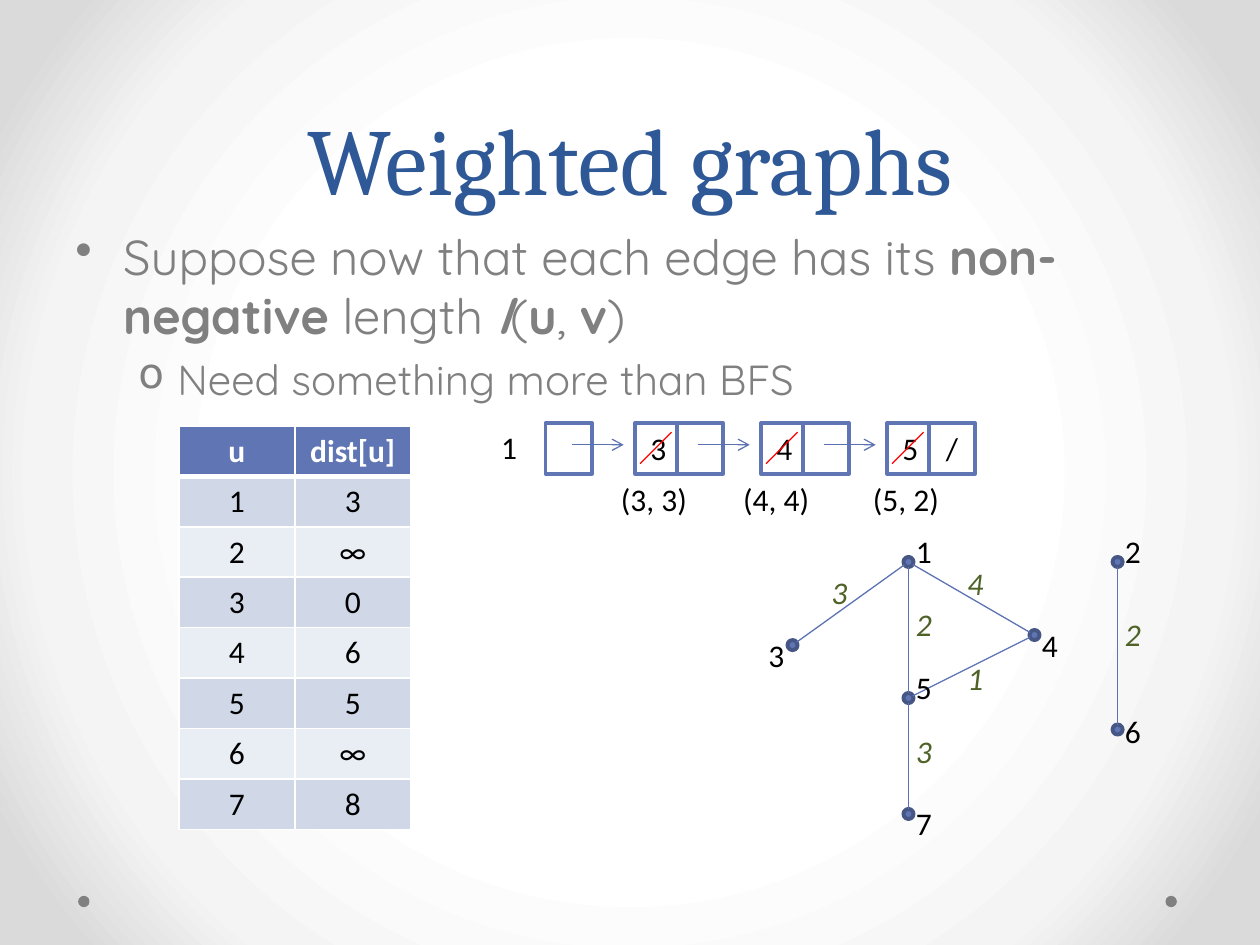
from dataclasses import dataclass
from math import hypot

from pptx import Presentation
from pptx.dml.color import RGBColor
from pptx.enum.shapes import MSO_CONNECTOR, MSO_SHAPE
from pptx.enum.text import MSO_ANCHOR, MSO_AUTO_SIZE, PP_ALIGN
from pptx.oxml import parse_xml
from pptx.oxml.ns import nsdecls, qn
from pptx.util import Inches, Pt


@dataclass(frozen=True)
class Theme:
    # Colours
    title: str = "2F5897"
    body: str = "808080"
    ink: str = "000000"
    paper: str = "FFFFFF"
    accent: str = "6076B4"
    node_line: str = "475785"
    edge: str = "5C72B2"
    weight: str = "4F6228"
    strike: str = "FF0000"
    bands: tuple = ("D0D8E8", "E9EDF4")
    backdrop: tuple = ((50, "FFFFFF"), (76, "F4F4F4"), (92, "DADADA"))
    # Fonts and type sizes
    title_font: str = "Cambria"
    body_font: str = "Quicksand"
    label_font: str = "Calibri"
    title_size: int = 54
    body_size: int = 28
    sub_size: int = 24
    label_size: int = 18


THEME = Theme()


def write(paragraph, text, size=THEME.label_size, font=THEME.label_font,
          color=THEME.ink, bold=False, italic=False, align=None):
    """Add one formatted run to a paragraph."""
    run = paragraph.add_run()
    run.text = text
    run.font.size, run.font.name = Pt(size), font
    run.font.bold, run.font.italic = bold, italic
    run.font.color.rgb = RGBColor.from_string(color)
    if align is not None:
        paragraph.alignment = align


class SlideBuilder:
    def __init__(self, slide, theme):
        self.slide, self.theme = slide, theme

    def background(self):
        self.slide.background.fill.gradient()
        linear = self.slide._element.find(".//" + qn("a:gradFill"))
        stops = "".join(
            f'<a:gs pos="{pos * 1000}"><a:srgbClr val="{color}"/></a:gs>'
            for pos, color in self.theme.backdrop)
        linear.getparent().replace(linear, parse_xml(
            f'<a:gradFill {nsdecls("a")} rotWithShape="1"><a:gsLst>{stops}</a:gsLst>'
            '<a:path path="circle"><a:fillToRect l="50000" t="50000" r="50000" b="50000"/>'
            '</a:path></a:gradFill>'))

    def title(self, text):
        heading = self.slide.shapes.title
        heading.left, heading.top = Inches(0.5), Inches(0)
        heading.width, heading.height = Inches(9), Inches(1.75)
        frame = heading.text_frame
        frame.auto_size = MSO_AUTO_SIZE.NONE
        frame.vertical_anchor = MSO_ANCHOR.BOTTOM
        frame.paragraphs[0].line_spacing = Pt(58)
        write(frame.paragraphs[0], text, size=self.theme.title_size,
              font=self.theme.title_font, color=self.theme.title, align=PP_ALIGN.CENTER)

    def text_frame(self, x, y, width, height):
        box = self.slide.shapes.add_textbox(*map(Inches, (x, y, width, height)))
        box.text_frame.word_wrap = True
        return box.text_frame

    def label(self, text, x, y, width=0.33, **style):
        write(self.text_frame(x, y, width, 0.4).paragraphs[0], text, **style)

    def bullet(self, paragraph, runs, char, margin, indent, size):
        properties = paragraph._p.get_or_add_pPr()
        properties.set("marL", str(Inches(margin)))
        properties.set("indent", str(Inches(indent)))
        properties.append(parse_xml(f'<a:buChar {nsdecls("a")} char="{char}"/>'))
        for text, style in runs:
            write(paragraph, text, size=size, font=self.theme.body_font,
                  color=self.theme.body, **style)

    def shape(self, kind, x, y, width, height, fill, line=None):
        item = self.slide.shapes.add_shape(kind, *map(Inches, (x, y, width, height)))
        item.shadow.inherit = False
        item.fill.solid()
        item.fill.fore_color.rgb = RGBColor.from_string(fill)
        if line:
            item.line.color.rgb = RGBColor.from_string(line)
            item.line.width = Pt(2.25)
        else:
            item.line.fill.background()
        return item

    def list_cell(self, x, text=""):
        cell = self.shape(MSO_SHAPE.RECTANGLE, x, 3.36, 0.37, 0.4,
                          self.theme.paper, self.theme.accent)
        cell.text_frame.vertical_anchor = MSO_ANCHOR.TOP
        if text:
            write(cell.text_frame.paragraphs[0], text, align=PP_ALIGN.CENTER)

    def line(self, start, end, color, arrow=False):
        link = self.slide.shapes.add_connector(
            MSO_CONNECTOR.STRAIGHT, *map(Inches, (*start, *end)))
        link.line.color.rgb = RGBColor.from_string(color)
        link.line.width = Pt(0.75)
        if arrow:
            link.line._get_or_add_ln().append(
                parse_xml(f'<a:tailEnd {nsdecls("a")} type="arrow"/>'))
        link._element.spPr.append(parse_xml(f'<a:effectLst {nsdecls("a")}/>'))

    def edge(self, start, end, radius=0.04):
        dx, dy = end[0] - start[0], end[1] - start[1]
        trim = radius / hypot(dx, dy)
        self.line((start[0] + dx * trim, start[1] + dy * trim),
                  (end[0] - dx * trim, end[1] - dy * trim), self.theme.edge)

    def table(self, rows, x, y, column_width, row_height):
        grid = self.slide.shapes.add_table(
            len(rows), len(rows[0]), Inches(x), Inches(y),
            Inches(column_width * len(rows[0])), Inches(row_height * len(rows))).table
        for r, row in enumerate(rows):
            header = r == 0
            fill = self.theme.accent if header else self.theme.bands[(r - 1) % 2]
            for c, text in enumerate(row):
                cell = grid.cell(r, c)
                write(cell.text_frame.paragraphs[0], text, bold=header,
                      color=self.theme.paper if header else self.theme.ink,
                      align=PP_ALIGN.CENTER)
                self.borders(cell, top=3 if r == 1 else 1, bottom=3 if header else 1)
                cell.fill.solid()
                cell.fill.fore_color.rgb = RGBColor.from_string(fill)

    def borders(self, cell, top, bottom):
        properties = cell._tc.get_or_add_tcPr()
        for side, width in (("L", 1), ("R", 1), ("T", top), ("B", bottom)):
            properties.append(parse_xml(
                f'<a:ln{side} {nsdecls("a")} w="{Pt(width)}"><a:solidFill>'
                f'<a:srgbClr val="{self.theme.paper}"/></a:solidFill></a:ln{side}>'))


def main():
    deck = Presentation()
    deck.slide_width, deck.slide_height = Inches(10), Inches(7.5)
    page = SlideBuilder(deck.slides.add_slide(deck.slide_layouts[5]), THEME)

    # Backdrop with its two corner dots, and the title
    page.background()
    for x in (9.25, 0.62):
        page.shape(MSO_SHAPE.OVAL, x, 7.11, 0.09, 0.09, THEME.body)
    page.title("Weighted graphs")

    # Bulleted statement
    plain, strong = {}, {"bold": True}
    statement = page.text_frame(0.5, 1.75, 9.33, 1.55)
    page.bullet(statement.paragraphs[0], [
        ("Suppose now that each edge has its ", plain), ("non-negative", strong),
        (" length ", plain), ("l", {"bold": True, "italic": True}), ("(", plain),
        ("u", strong), (", ", plain), ("v", strong), (")", plain),
    ], "•", 0.38, -0.38, THEME.body_size)
    remark = statement.add_paragraph()
    remark.level = 1
    page.bullet(remark, [("Need something more than BFS", plain)],
                "o", 0.81, -0.31, THEME.sub_size)
    remark.space_before = Pt(5)

    # Graph: node centres, edges, node names and edge lengths
    nodes = {1: (7.21, 4.46), 2: (8.87, 4.46), 3: (6.29, 5.12), 4: (8.21, 5.04),
             5: (7.21, 5.54), 6: (8.87, 5.79), 7: (7.21, 6.46)}
    for x, y in nodes.values():
        page.shape(MSO_SHAPE.OVAL, x - 0.04, y - 0.04, 0.08, 0.08,
                   THEME.accent, THEME.node_line)
    for start, end in ((1, 4), (4, 5), (5, 1), (3, 1), (5, 7), (2, 6)):
        page.edge(nodes[start], nodes[end])
    names = ((7.17, 4.17), (8.83, 4.17), (6, 5), (8.17, 4.92),
             (7.17, 5.25), (8.83, 5.6), (7.17, 6.33))
    for name, place in zip(nodes, names):
        page.label(str(name), *place)
    for length, x, y in (("3", 6.5, 4.5), ("2", 7.17, 4.75), ("1", 7.58, 5.18),
                         ("4", 7.58, 4.43), ("3", 7.17, 5.76), ("2", 8.83, 4.83)):
        page.label(length, x, y, color=THEME.weight, italic=True)

    # Distance table
    distances = ("3", "∞", "0", "6", "5", "∞", "8")
    page.table([("u", "dist[u]")] + [(str(u), d) for u, d in enumerate(distances, 1)],
               1.42, 3.38, 0.92, 0.4)

    # Adjacency list of node 1: each entry is struck out and replaced by a pair
    page.label("1", 3.83, 3.35, width=0.42, align=PP_ALIGN.CENTER)
    page.list_cell(4.33)
    entries = (("3", "", "(3, 3)", 4.83), ("4", "", "(4, 4)", 5.8),
               ("5", "/", "(5, 2)", 6.83))
    for step, (neighbour, pointer, pair, pair_x) in enumerate(entries):
        page.line((4.54 + step, 3.53), (4.95 + step, 3.53), THEME.edge, arrow=True)
        page.list_cell(5.04 + step, neighbour)
        page.list_cell(5.37 + step, pointer)
        page.line((5.33 + step, 3.43), (5.08 + step, 3.68), THEME.strike)
        page.label(pair, pair_x, 3.76, width=0.9)

    deck.save("out.pptx")


if __name__ == "__main__":
    main()
